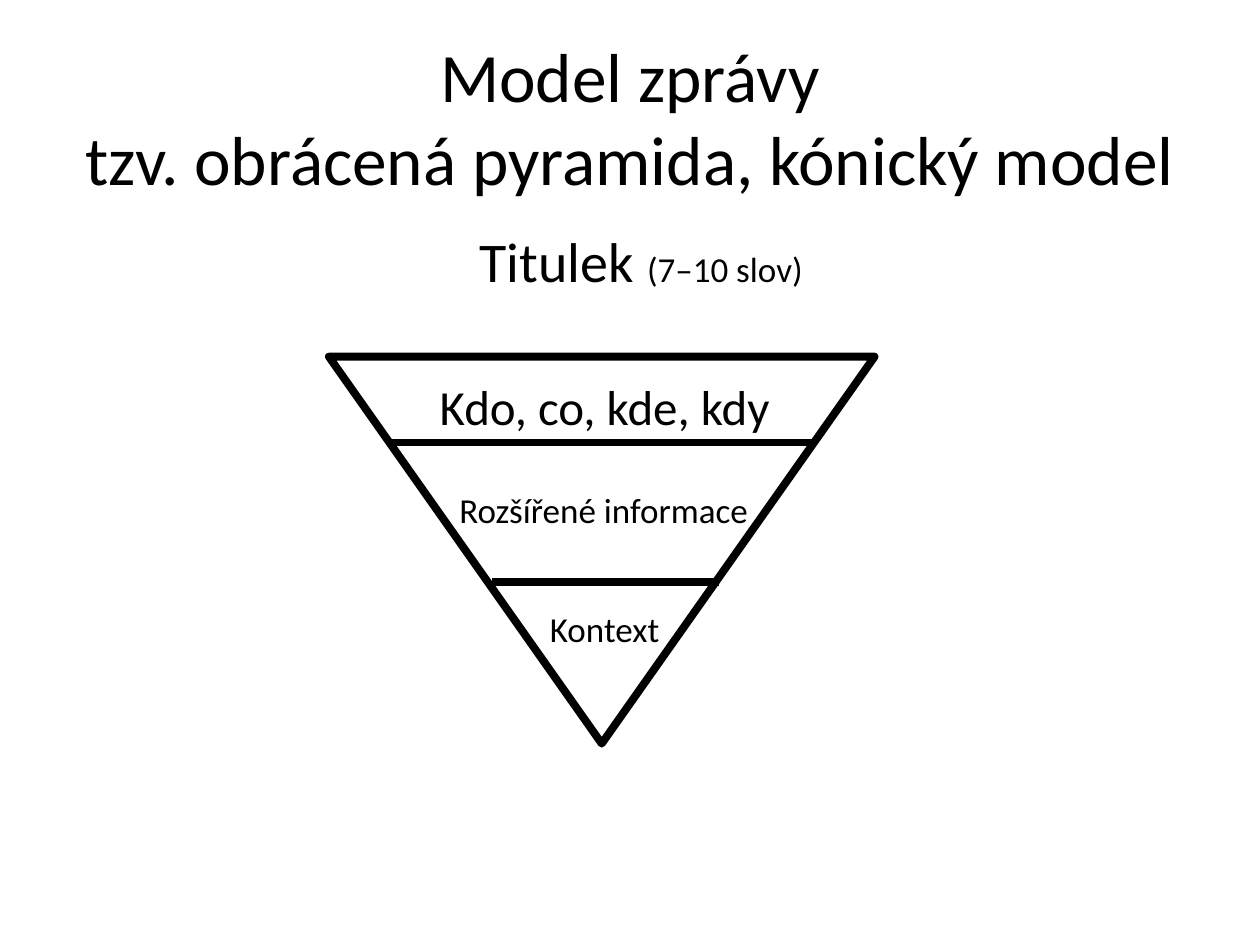
from dataclasses import dataclass

from pptx import Presentation
from pptx.dml.color import RGBColor
from pptx.enum.shapes import MSO_CONNECTOR, MSO_SHAPE
from pptx.enum.text import MSO_ANCHOR, PP_ALIGN
from pptx.oxml.ns import qn
from pptx.slide import Slide
from pptx.util import Cm, Pt

LEFT, CENTER = PP_ALIGN.LEFT, PP_ALIGN.CENTER
TOP, MIDDLE = MSO_ANCHOR.TOP, MSO_ANCHOR.MIDDLE
STRAIGHT = MSO_CONNECTOR.STRAIGHT
TRIANGLE = MSO_SHAPE.ISOSCELES_TRIANGLE

COLORS = {"ink": "000000", "paper": "FFFFFF"}
FONT = "Calibri"
STROKE = Pt(4.5)


@dataclass(frozen=True)
class Label:
    left: float
    top: float
    width: float
    height: float
    wording: tuple[tuple[str, float], ...]  # text and size in points
    align: PP_ALIGN = CENTER
    anchor: MSO_ANCHOR = TOP
    wrap: bool = True
    inset: float = 0.25


@dataclass(frozen=True)
class Divider:
    left: float
    right: float
    level: float


LABELS = (
    Label(1.27, 0.76, 22.86, 3.18,
          (("Model zprávy\vtzv. obrácená pyramida, kónický model", 39.6),),
          anchor=MIDDLE),
    Label(1.27, 4.45, 22.86, 12.57,
          (("Titulek ", 32), ("(7–10 slov)", 20)), align=LEFT, inset=8.4),
    Label(8.97, 9.73, 6.4, 1.12, (("Rozšířené informace", 20),), wrap=False),
    Label(8.0, 7.47, 8.38, 1.45, (("Kdo, co, kde, kdy", 28),)),
    Label(10.82, 12.12, 2.74, 1.12, (("Kontext", 20),), wrap=False),
)
DIVIDERS = (Divider(7.87, 16.38, 8.92), Divider(9.91, 14.5, 11.73))


def color(name: str) -> RGBColor:
    return RGBColor.from_string(COLORS[name])


def apply(target: object, values: dict[str, object]) -> None:
    """Set each named attribute of the target."""
    for name, value in values.items():
        setattr(target, name, value)


def ink_line(line) -> None:
    line.width = STROKE
    line.fill.solid()
    line.fill.fore_color.rgb = color("ink")


def draw_cone(slide: Slide) -> None:
    cone = slide.shapes.add_shape(
        TRIANGLE, Cm(6.63), Cm(7.19), Cm(11), Cm(7.8))
    cone.rotation = 180
    cone.shadow.inherit = False
    cone.fill.solid()
    cone.fill.fore_color.rgb = color("paper")
    ink_line(cone.line)


def draw_divider(slide: Slide, item: Divider) -> None:
    level = Cm(item.level)
    rule = slide.shapes.add_connector(
        STRAIGHT, Cm(item.left), level, Cm(item.right), level)
    ink_line(rule.line)
    props = rule._element.spPr
    props.append(props.makeelement(qn("a:effectLst"), {}))


def draw_label(slide: Slide, item: Label) -> None:
    box = slide.shapes.add_textbox(
        Cm(item.left), Cm(item.top), Cm(item.width), Cm(item.height))
    frame = box.text_frame
    apply(frame, {"word_wrap": item.wrap, "vertical_anchor": item.anchor,
                  "margin_left": Cm(item.inset)})
    para = frame.paragraphs[0]
    para.alignment = item.align
    for words, size in item.wording:
        for row, text in enumerate(words.split("\v")):
            if row:
                para.add_line_break()
            run = para.add_run()
            run.text = text
            apply(run.font, {"name": FONT, "size": Pt(size)})
            run.font.color.rgb = color("ink")


def main() -> None:
    deck = Presentation()
    apply(deck, {"slide_width": Cm(25.4), "slide_height": Cm(19.05)})
    slide = deck.slides.add_slide(deck.slide_layouts[6])
    draw_cone(slide)
    for item in DIVIDERS:
        draw_divider(slide, item)
    for item in LABELS:
        draw_label(slide, item)
    deck.save("out.pptx")


if __name__ == "__main__":
    main()
